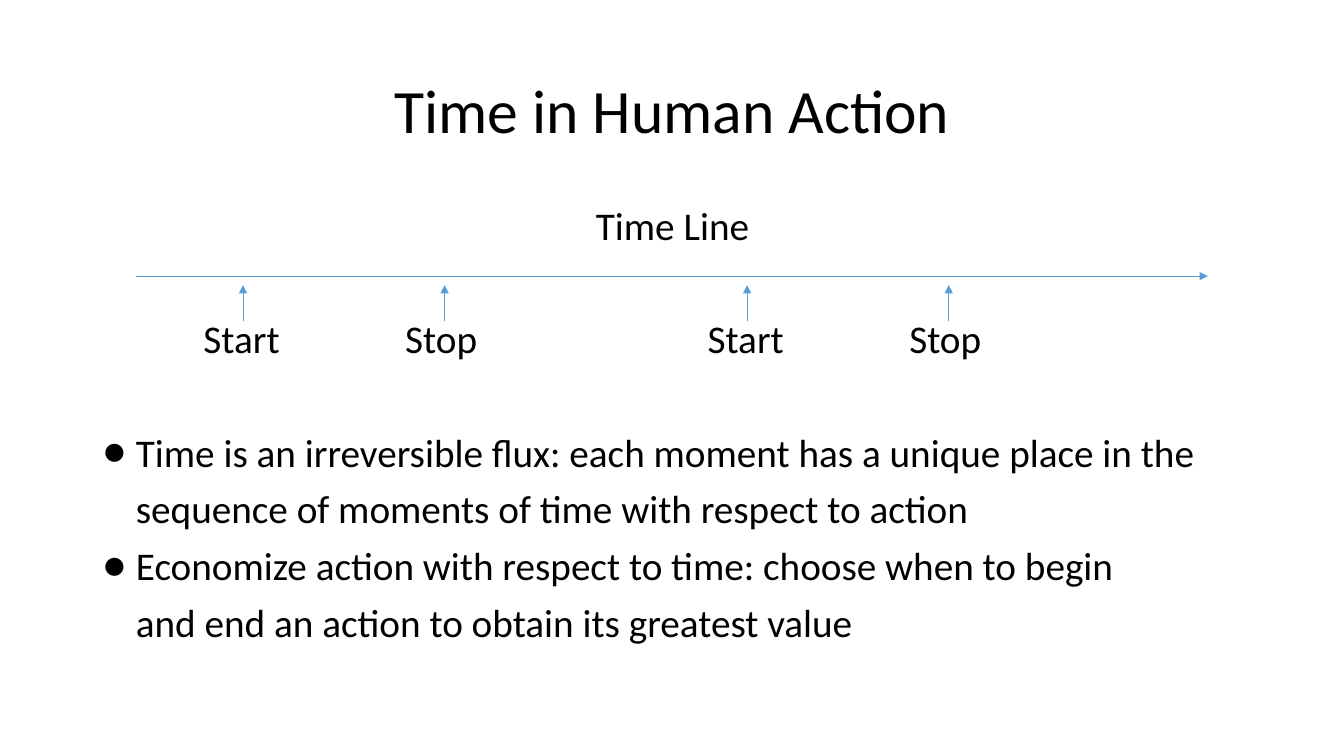
import pptx
import pptx.util
import pptx.dml.color
import pptx.enum.shapes
import pptx.enum.text
import pptx.oxml.ns
import lxml.etree

BLACK = pptx.dml.color.RGBColor(0x00, 0x00, 0x00)
BLUE = pptx.dml.color.RGBColor(0x5B, 0x9B, 0xD5)
MID = pptx.enum.text.MSO_ANCHOR.MIDDLE
TOP = pptx.enum.text.MSO_ANCHOR.TOP
CENTER = pptx.enum.text.PP_ALIGN.CENTER
LEFT = pptx.enum.text.PP_ALIGN.LEFT
qn = pptx.oxml.ns.qn


class Board:
    """Holds the style and the slide; lengths are columns and rows of a grid."""
    font = "Calibri"
    left, top = 0.92, 2.0
    col, row = 1.0, 0.56

    def __init__(self, deck):
        self.slide = deck.slides.add_slide(deck.slide_layouts[5])

    def spot(self, x, y):
        return (pptx.util.Inches(self.left + x * self.col),
                pptx.util.Inches(self.top + y * self.row))

    def place(self, shape, x, y, wide, high):
        shape.left, shape.top = self.spot(x, y)
        shape.width = pptx.util.Inches(wide * self.col)
        shape.height = pptx.util.Inches(high * self.row)

    def letter(self, shape, lines, size, align, anchor=TOP, space=0.9):
        frame = shape.text_frame
        frame.text = "\n".join(lines)
        frame.word_wrap = True
        frame.auto_size = pptx.enum.text.MSO_AUTO_SIZE.NONE
        frame.vertical_anchor = anchor
        looks = {"name": self.font, "size": pptx.util.Pt(size)}
        for para in frame.paragraphs:
            para.alignment = align
            para.line_spacing = space
            for run in para.runs:
                for key, value in looks.items():
                    setattr(run.font, key, value)
                run.font.color.rgb = BLACK
        return frame

    def title(self, text, *box):
        shape = self.slide.shapes.title
        self.place(shape, *box)
        self.letter(shape, [text], 44, CENTER, MID)

    def text(self, lines, *box, align=LEFT, space=0.9):
        shape = self.slide.shapes.add_textbox(0, 0, 0, 0)
        self.place(shape, *box)
        return self.letter(shape, lines, 28, align, space=space)

    def points(self, lines, *box):
        frame = self.text(lines, *box, space=pptx.util.Pt(40.5))
        hang = pptx.util.Inches(0.33)
        for para in frame.paragraphs:
            props = para._p.get_or_add_pPr()
            for key, value in {"marL": hang, "indent": -hang}.items():
                props.set(key, str(value))
            lxml.etree.SubElement(props, qn("a:buFont"), typeface=self.font)
            lxml.etree.SubElement(props, qn("a:buChar"), char="●")

    def arrow(self, start, end):
        line = self.slide.shapes.add_connector(
            pptx.enum.shapes.MSO_CONNECTOR.STRAIGHT,
            *self.spot(*start), *self.spot(*end))
        line.line.color.rgb = BLUE
        line.line.width = pptx.util.Pt(0.5)
        props = line._element.spPr
        lxml.etree.SubElement(props.get_or_add_ln(), qn("a:tailEnd"),
                              type="triangle")
        lxml.etree.SubElement(props, qn("a:effectLst"))


def main():
    deck = pptx.Presentation()
    deck.slide_width = pptx.util.Inches(13.33)
    deck.slide_height = pptx.util.Inches(7.5)
    board = Board(deck)

    # Title
    board.title("Time in Human Action", 0, -2.86, 11.5, 2.59)

    # Time line
    board.text(["Time Line"], 0, 0, 11.5, 1, align=CENTER)
    board.arrow((0.43, 1.32), (11.06, 1.32))

    # Marks under the line
    for name, col in (("Start", 1), ("Stop", 3), ("Start", 6), ("Stop", 8)):
        board.text([name], col, 2, 1.5, 1)
        board.arrow((col + 0.49, 2.12), (col + 0.49, 1.48))

    # Points
    board.points([
        "Time is an irreversible flux: each moment has a unique place in the"
        "\vsequence of moments of time with respect to action",
        "Economize action with respect to time: choose when to begin"
        "\vand end an action to obtain its greatest value",
    ], 0, 3.75, 11.5, 4.75)

    deck.save("out.pptx")


if __name__ == "__main__":
    main()
